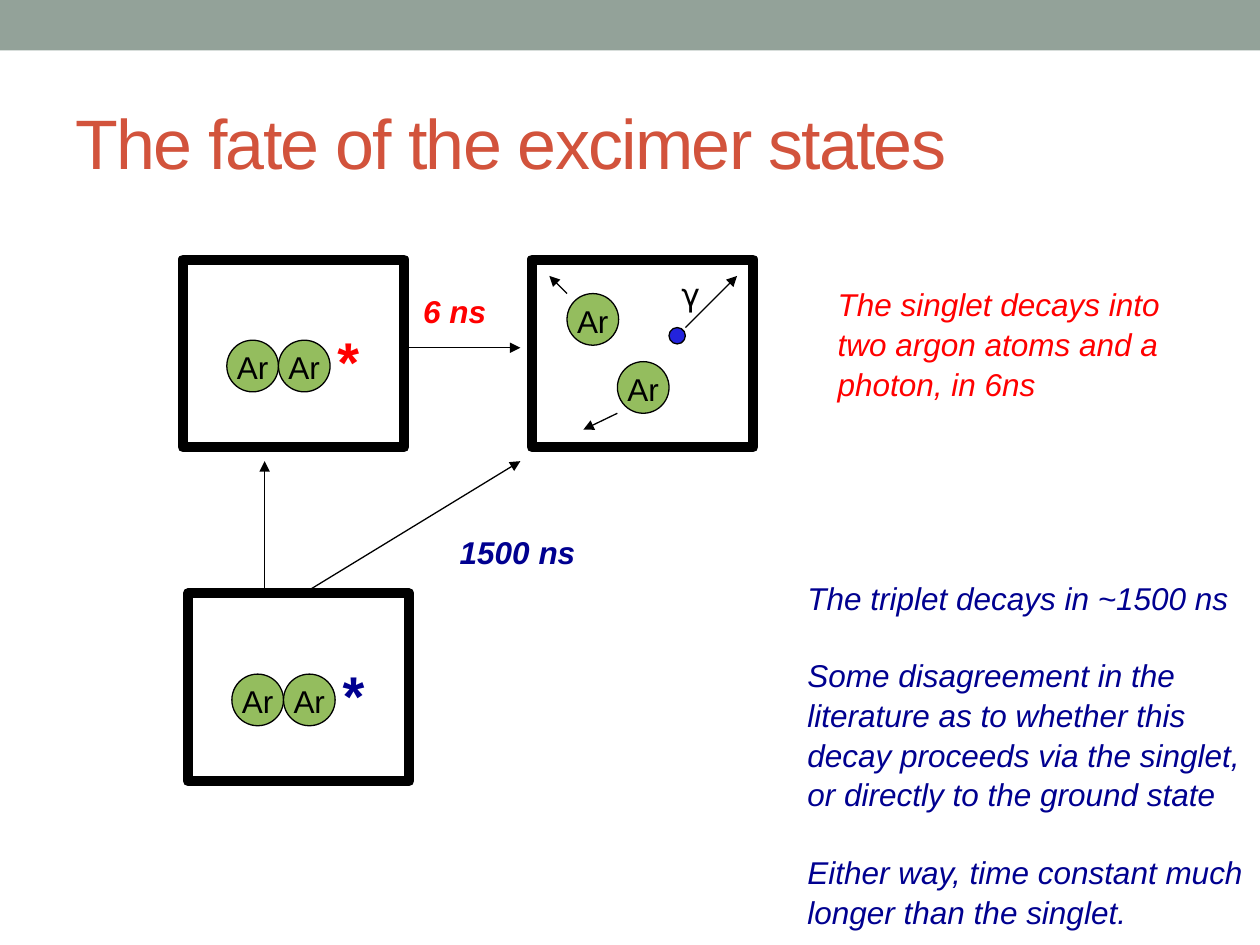
from lxml import etree
from pptx import Presentation
from pptx import util as u
from pptx.dml.color import RGBColor
from pptx.enum import shapes, text
from pptx.oxml import ns

COLORS = {
    "band": "93A299", "title": "D2533C", "black": "000000", "white": "FFFFFF",
    "argon": "94BD5E", "photon": "2323DC", "singlet": "FF0000", "triplet": "000090",
}
FRAME_SIZE = (1.76, 1.49)
ATOM_SIZE = 0.41


def color(name):
    return RGBColor.from_string(COLORS[name])


def inches(*lengths):
    return [u.Inches(length) for length in lengths]


def style_text(para, size, tint, font="Arial", bold=False, italic=False):
    para.font.size = u.Pt(size)
    para.font.name = font
    para.font.bold = bold
    para.font.italic = italic
    para.font.color.rgb = color(tint)


def add_solid(page, kind, box, fill, line_width=0):
    shape = page.shapes.add_shape(kind, *inches(*box))
    shape.shadow.inherit = False
    shape.fill.solid()
    shape.fill.fore_color.rgb = color(fill)
    if line_width:
        shape.line.color.rgb = color("black")
        shape.line.width = u.Pt(line_width)
    else:
        shape.line.fill.background()
    return shape


def add_text(page, box, lines, size, tint, top=0.05, spacing=None, gap=0, **style):
    label = page.shapes.add_textbox(*inches(*box))
    frame = label.text_frame
    frame.word_wrap = True
    frame.margin_top = u.Inches(top)
    frame.text = "\n".join(lines)
    for index, para in enumerate(frame.paragraphs):
        style_text(para, size, tint, **style)
        para.line_spacing = spacing
        if index:
            para.space_before = u.Pt(gap)
    return label


def add_note(page, box, lines, tint, bold=False):
    add_text(page, box, lines, 18, tint, spacing=1.05, gap=21.6, bold=bold, italic=True)


def add_arrow(page, start, end):
    arrow = page.shapes.add_connector(
        shapes.MSO_CONNECTOR.STRAIGHT, *inches(*start, *end))
    arrow.line.color.rgb = color("black")
    arrow.line.width = u.Pt(0.75)
    etree.SubElement(arrow.line._get_or_add_ln(), ns.qn("a:tailEnd"), type="triangle")
    etree.SubElement(arrow._element.spPr, ns.qn("a:effectLst"))


def add_frame(page, left, top):
    add_solid(page, shapes.MSO_SHAPE.RECTANGLE, (left, top, *FRAME_SIZE), "white", 5.67)


def add_atom(page, left, top):
    atom = add_solid(page, shapes.MSO_SHAPE.OVAL,
                     (left, top, ATOM_SIZE, ATOM_SIZE), "argon", 0.75)
    frame = atom.text_frame
    frame.word_wrap = False
    frame.margin_top = u.Inches(0.07)
    frame.vertical_anchor = text.MSO_ANCHOR.MIDDLE
    frame.text = "Ar"
    para = frame.paragraphs[0]
    para.alignment = text.PP_ALIGN.CENTER
    style_text(para, 18, "black")


def add_header(page, width):
    add_solid(page, shapes.MSO_SHAPE.RECTANGLE, (0, 0, width, 0.4), "band")
    title = add_text(page, (0.5, 0.58, width - 1, 1.08),
                     ["The fate of the excimer states"], 40, "title")
    title.text_frame.vertical_anchor = text.MSO_ANCHOR.MIDDLE
    for span in title.text_frame.paragraphs[0].runs:
        span.font._element.set("spc", "-100")


def add_excimer(page, left, top, tint):
    add_frame(page, left, top)
    for index in range(2):
        add_atom(page, left + 0.35 + index * ATOM_SIZE, top + 0.64)
    add_text(page, (left + 1.13, top + 0.45, 0.68, 0.53), ["*"], 32, tint,
             top=0.08, bold=True)


def add_ground_state(page, left, top):
    add_frame(page, left, top)
    for x, y in ((0.68, 0.81), (0.28, 0.27)):
        add_atom(page, left + x, top + y)
    add_solid(page, shapes.MSO_SHAPE.OVAL,
              (left + 1.09, top + 0.54, 0.13, 0.13), "photon", 0.75)
    moves = (((0.28, 0.27), (0.14, 0.13)),
             ((0.68, 1.22), (0.41, 1.35)),
             ((1.22, 0.54), (1.63, 0.13)))
    for start, end in moves:
        add_arrow(page, *[(left + x, top + y) for x, y in (start, end)])
    add_text(page, (left + 1.09, top + 0.14, 0.68, 0.05), ["γ"], 18, "black",
             spacing=0.98, font="DejaVu Sans")


def add_decays(page):
    for start, end in (((3.22, 2.76), (4.13, 2.76)),
                       ((2.41, 4.71), (4.13, 3.66)),
                       ((2.1, 4.69), (2.1, 3.66))):
        add_arrow(page, start, end)
    add_note(page, (3.26, 2.25, 0.99, 0.4), ["6 ns"], "singlet", bold=True)
    add_note(page, (3.55, 4.17, 1.61, 0.4), ["1500 ns"], "triplet", bold=True)


def add_explanations(page):
    add_note(page, (6.55, 2.2, 3.1, 1.01),
             ["The singlet decays into two argon atoms and a photon, in 6ns"], "singlet")
    add_note(page, (6.31, 4.53, 3.69, 2.83), [
        "The triplet decays in ~1500 ns",
        "Some disagreement in the literature as to whether this decay proceeds "
        "via the singlet, or directly to the ground state",
        "Either way, time constant much longer than the singlet.",
    ], "triplet")


def main():
    deck = Presentation()
    deck.slide_width, deck.slide_height = inches(10, 7.5)
    page = deck.slides.add_slide(deck.slide_layouts[6])
    add_header(page, 10)
    add_excimer(page, 1.45, 2.06, "singlet")
    add_ground_state(page, 4.22, 2.06)
    add_excimer(page, 1.49, 4.71, "triplet")
    add_decays(page)
    add_explanations(page)
    deck.save("out.pptx")


if __name__ == "__main__":
    main()
